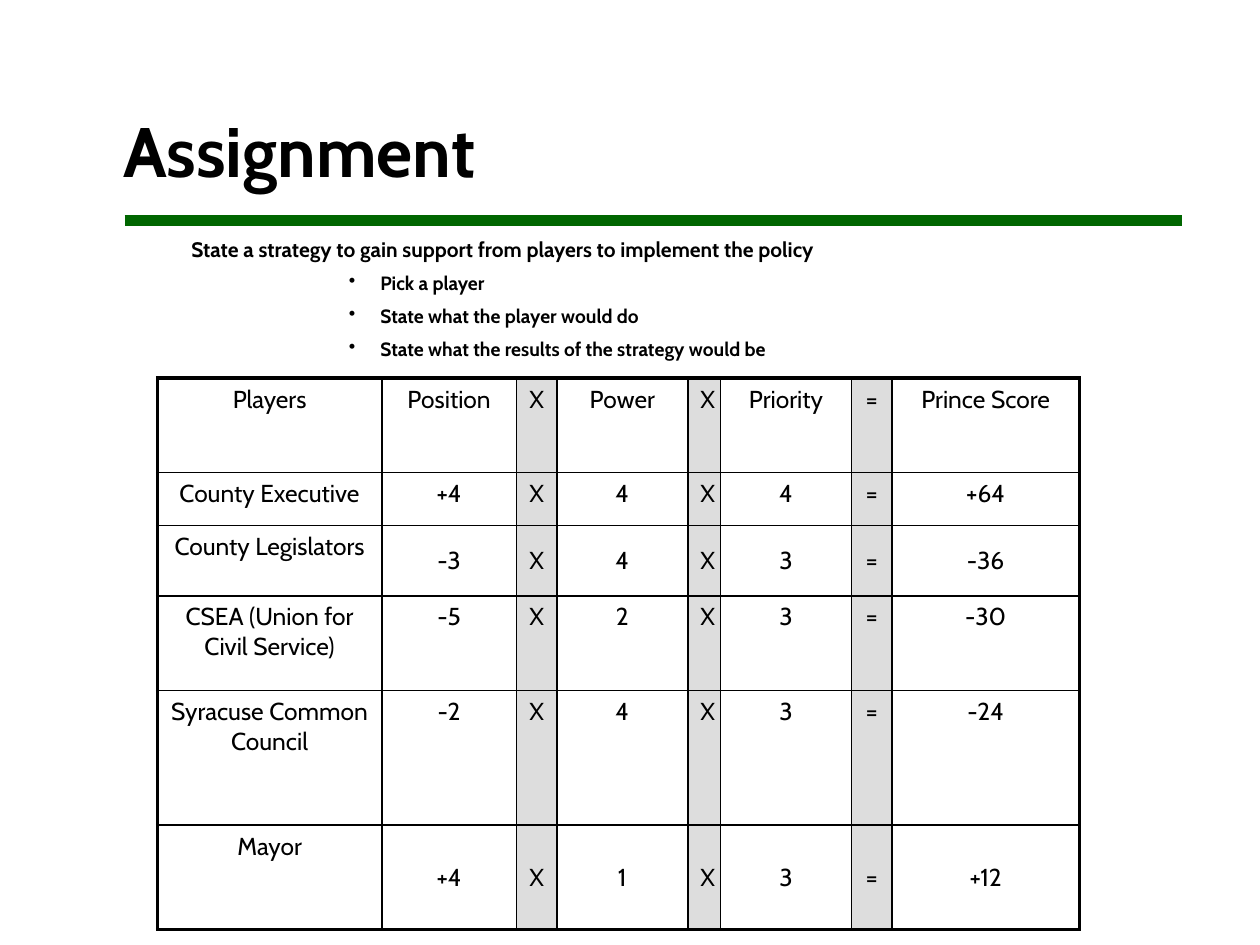
"""Builds the Assignment slide: a strategy prompt above a table of Prince scores."""
from pptx import Presentation
from pptx.dml.color import RGBColor
from pptx.enum.shapes import MSO_CONNECTOR
from pptx.enum.text import MSO_ANCHOR, PP_ALIGN
from pptx.oxml.ns import qn
from pptx.util import Inches, Pt
from lxml import etree

STRAIGHT = MSO_CONNECTOR.STRAIGHT
TOP, MIDDLE, BOTTOM = MSO_ANCHOR.TOP, MSO_ANCHOR.MIDDLE, MSO_ANCHOR.BOTTOM
LEFT, CENTER = PP_ALIGN.LEFT, PP_ALIGN.CENTER

COLORS = {"ink": "000000", "rule": "006600", "operator": "DDDDDD"}
FONT = "Cabin"
SLIDE_SIZE = (10, 7.5)

TITLE = "Assignment"
PROMPT = "State a strategy to gain support from players to implement the policy"
STEPS = [
    "Pick a player",
    "State what the player would do",
    "State what the results of the strategy would be",
]

HEADERS = ("Players", "Position", "Power", "Priority", "Prince Score")
SCORES = [
    ("County Executive", "+4", "4", "4", "+64"),
    ("County Legislators", "-3", "4", "3", "-36"),
    ("CSEA (Union for Civil Service)", "-5", "2", "3", "-30"),
    ("Syracuse Common Council", "-2", "4", "3", "-24"),
    ("Mayor", "+4", "1", "3", "+12"),
]
OPERATORS = {2: "X", 4: "X", 6: "="}
MIDDLE_ROWS = (2, 5)

TITLE_BOX = (0.88, 0.68, 8.5, 0.9)
PROMPT_BOX = (1.42, 1.83, 8.84, 1.94)
RULE = (0.99, 1.75, 9.38, 1.75)
TABLE_CORNER = (1.25, 3)
COLUMNS = (1.78, 1.07, 0.32, 1.04, 0.26, 1.04, 0.32, 1.49)
ROWS = (0.75, 0.42, 0.56, 0.75, 1.07, 0.83)
THIN, THICK = 1, 2.25


def color(name):
    return RGBColor.from_string(COLORS[name])


def write(para, text, size, bold=False, align=LEFT, before=0, spacing=None, bullet=None):
    para.alignment = align
    para.space_before = Pt(before)
    if spacing:
        para.line_spacing = spacing
    if bullet:
        properties = para._p.get_or_add_pPr()
        properties.set("marL", str(Inches(1.5)))
        properties.set("indent", str(-Inches(0.25)))
        etree.SubElement(properties, qn("a:buChar")).set("char", bullet)
    span = para.add_run()
    span.text = text
    span.font.name = FONT
    span.font.size = Pt(size)
    span.font.bold = bold
    span.font.color.rgb = color("ink")


def add_box(page, place, anchor):
    frame = page.shapes.add_textbox(*map(Inches, place)).text_frame
    frame.word_wrap = True
    frame.vertical_anchor = anchor
    return frame


def add_rule(page):
    rule = page.shapes.add_connector(STRAIGHT, *map(Inches, RULE))
    rule.line.color.rgb = color("rule")
    rule.line.width = Pt(6)
    etree.SubElement(rule._element.spPr, qn("a:effectLst"))


def add_border(cell, side, width):
    line = etree.SubElement(cell._tc.get_or_add_tcPr(), qn(f"a:ln{side}"), w=str(Pt(width)))
    fill = etree.SubElement(line, qn("a:solidFill"))
    etree.SubElement(fill, qn("a:srgbClr"), val=COLORS["ink"])


def with_operators(values):
    remaining = iter(values)
    return [OPERATORS.get(column) or next(remaining) for column in range(len(COLUMNS))]


def add_scores(page):
    size = (sum(COLUMNS), sum(ROWS))
    table = page.shapes.add_table(
        len(ROWS), len(COLUMNS), *map(Inches, TABLE_CORNER + size)
    ).table
    table.first_row = table.horz_banding = False
    for column, width in zip(table.columns, COLUMNS):
        column.width = Inches(width)
    for row, height in zip(table.rows, ROWS):
        row.height = Inches(height)
    for row, values in enumerate([HEADERS] + SCORES):
        for column, text in enumerate(with_operators(values)):
            cell = table.cell(row, column)
            outer = {
                "L": column == 0,
                "R": column == len(COLUMNS) - 1,
                "T": row == 0,
                "B": row == len(ROWS) - 1,
            }
            for side, is_outer in outer.items():
                add_border(cell, side, THICK if is_outer else THIN)
            if column in OPERATORS:
                cell.fill.solid()
                cell.fill.fore_color.rgb = color("operator")
            else:
                cell.fill.background()
            cell.vertical_anchor = MIDDLE if column and row in MIDDLE_ROWS else TOP
            write(cell.text_frame.paragraphs[0], text, 14, align=CENTER)


def main():
    deck = Presentation()
    deck.slide_width, deck.slide_height = map(Inches, SLIDE_SIZE)
    page = deck.slides.add_slide(deck.slide_layouts[6])
    add_rule(page)
    title = add_box(page, TITLE_BOX, BOTTOM)
    write(title.paragraphs[0], TITLE, 40, bold=True, spacing=0.9)
    prompt = add_box(page, PROMPT_BOX, TOP)
    write(prompt.paragraphs[0], PROMPT, 12, bold=True)
    for step in STEPS:
        write(prompt.add_paragraph(), step, 11, bold=True, before=5.5, bullet="•")
    add_scores(page)
    deck.save("out.pptx")


if __name__ == "__main__":
    main()
